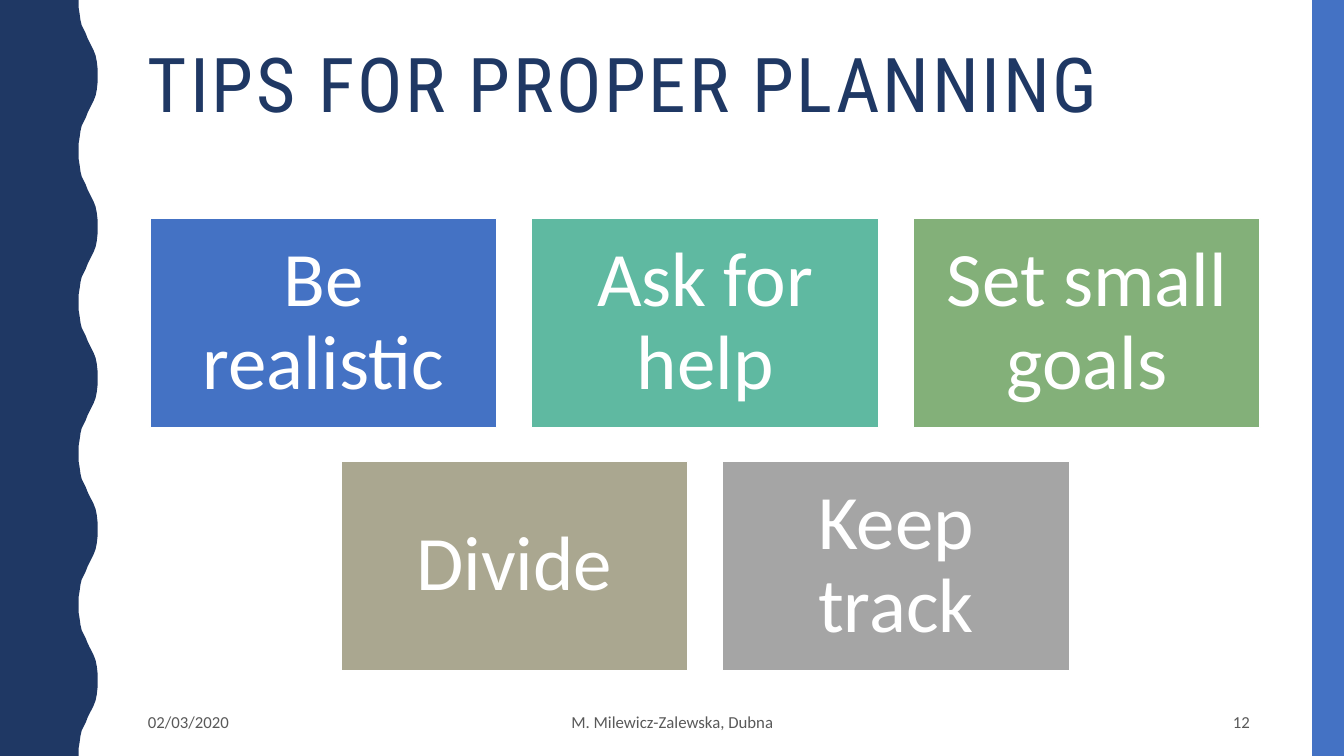
from pptx import Presentation
from pptx.dml.color import RGBColor
from pptx.enum.shapes import MSO_SHAPE
from pptx.enum.text import MSO_ANCHOR, PP_ALIGN
from pptx.util import Cm, Pt

COLORS = {
    "navy": "1F3864",
    "blue": "4472C4",
    "teal": "5FB9A1",
    "green": "83B079",
    "khaki": "AAA790",
    "silver": "A5A5A5",
    "gray": "595959",
    "white": "FFFFFF",
}


def write(shape, text, size, color, font="Calibri", align=PP_ALIGN.LEFT,
          anchor=MSO_ANCHOR.MIDDLE, line_spacing=1.0, letter_spacing=0, inset=None):
    """Fill a shape with one paragraph; letter_spacing is in points."""
    frame = shape.text_frame
    frame.word_wrap = True
    frame.vertical_anchor = anchor
    if inset is not None:
        frame.margin_left = frame.margin_right = inset
        frame.margin_top = frame.margin_bottom = inset
    paragraph = frame.paragraphs[0]
    paragraph.alignment = align
    paragraph.line_spacing = line_spacing
    run = paragraph.add_run()
    run.text = text
    run.font.name = font
    run.font.size = Pt(size)
    run.font.color.rgb = RGBColor.from_string(COLORS[color])
    if letter_spacing:
        run.font._element.set("spc", str(letter_spacing * 100))


def paint(shape, fill, line=None):
    shape.shadow.inherit = False
    shape.fill.solid()
    shape.fill.fore_color.rgb = RGBColor.from_string(COLORS[fill])
    if line:
        shape.line.color.rgb = RGBColor.from_string(COLORS[line])
        shape.line.width = Pt(1)
    else:
        shape.line.fill.background()


presentation = Presentation()
presentation.slide_width = Cm(33.87)
presentation.slide_height = Cm(19.05)
slide = presentation.slides.add_slide(presentation.slide_layouts[6])
shapes = slide.shapes

# Wavy left band: half a wave, mirrored and repeated down the slide
WAVE_COUNT, WAVE_LENGTH = 5, 3.81
half_wave = [
    (1.98, 0), (1.98, 0.18), (2.01, 0.36), (2.03, 0.51), (2.06, 0.64),
    (2.11, 0.74), (2.16, 0.84), (2.21, 0.97), (2.26, 1.07), (2.31, 1.17),
    (2.36, 1.27), (2.41, 1.4), (2.44, 1.55), (2.46, 1.73), (2.46, 1.9),
]
wave = half_wave + [(x, WAVE_LENGTH - y) for x, y in reversed(half_wave)]
edge = [(Cm(x), Cm(y + index * WAVE_LENGTH))
        for index in range(WAVE_COUNT) for x, y in wave]
builder = shapes.build_freeform(0, 0)
builder.add_line_segments(edge + [(0, Cm(19.05))], close=True)
paint(builder.convert_to_shape(), "navy")

right_band = shapes.add_shape(MSO_SHAPE.RECTANGLE, Cm(33.07), 0, Cm(0.8), Cm(19.05))
paint(right_band, "blue")

title = shapes.add_textbox(Cm(3.48), Cm(1.07), Cm(28.27), Cm(4.14))
write(title, "TIPS FOR PROPER PLANNING", 54, "navy", font="Roboto Condensed",
      anchor=MSO_ANCHOR.TOP, line_spacing=0.9, letter_spacing=2)

# Tip cards: the second row is shifted by half a column
CARD_WIDTH, CARD_HEIGHT = 8.74, 5.26
COLUMN_STEP, ROW_STEP = 9.62, 6.12
tip_rows = [
    [("Be realistic", "blue"), ("Ask for help", "teal"), ("Set small goals", "green")],
    [("Divide", "khaki"), ("Keep track", "silver")],
]
for row, tips in enumerate(tip_rows):
    for column, (tip, color) in enumerate(tips):
        card = shapes.add_shape(
            MSO_SHAPE.RECTANGLE,
            Cm(3.78 + (column + row / 2) * COLUMN_STEP), Cm(5.51 + row * ROW_STEP),
            Cm(CARD_WIDTH), Cm(CARD_HEIGHT))
        paint(card, color, line="white")
        write(card, tip, 55, "white", align=PP_ALIGN.CENTER,
              line_spacing=0.9, inset=Cm(0.58))

footers = [
    ("02/03/2020", 3.48, 6.48, PP_ALIGN.LEFT),
    ("M. Milewicz-Zalewska, Dubna", 11.23, 11.43, PP_ALIGN.CENTER),
    ("12", 23.93, 7.82, PP_ALIGN.RIGHT),
]
for text, left, width, align in footers:
    footer = shapes.add_textbox(Cm(left), Cm(17.7), Cm(width), Cm(0.97))
    write(footer, text, 12, "gray", align=align)

presentation.save("out.pptx")
